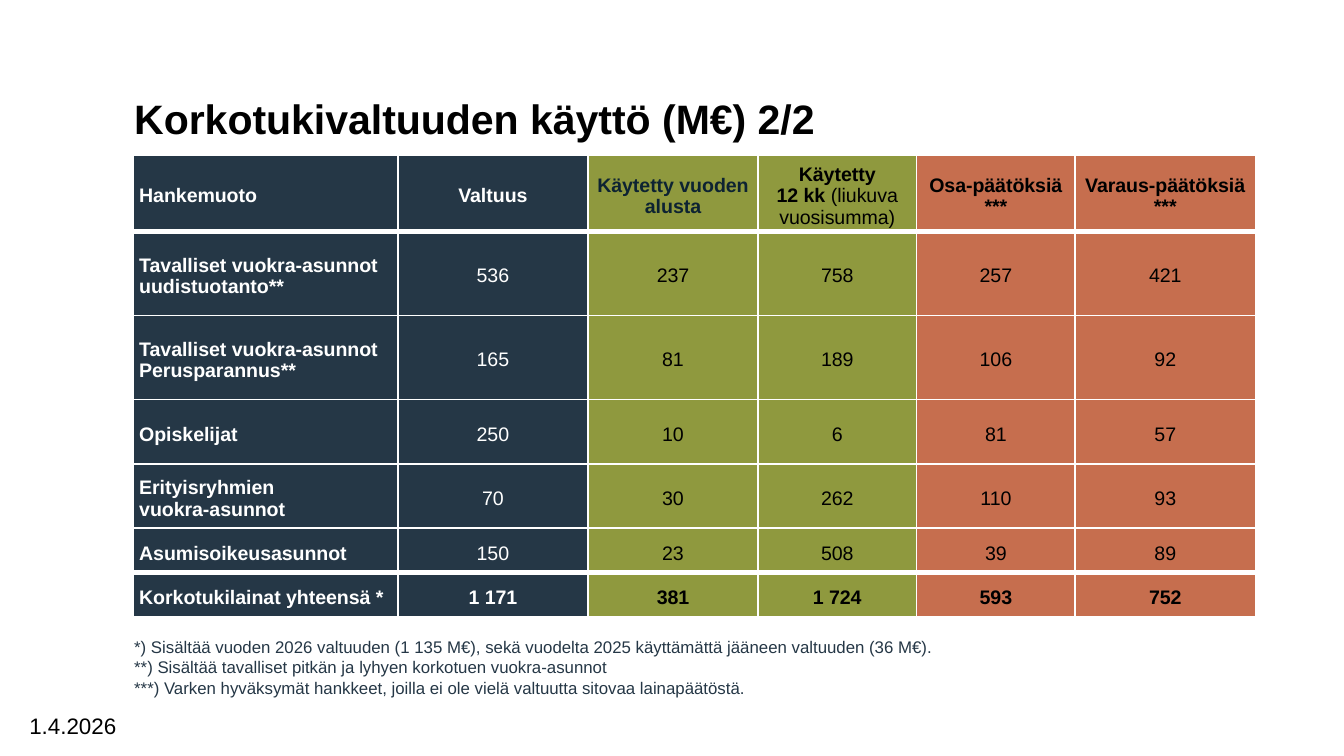
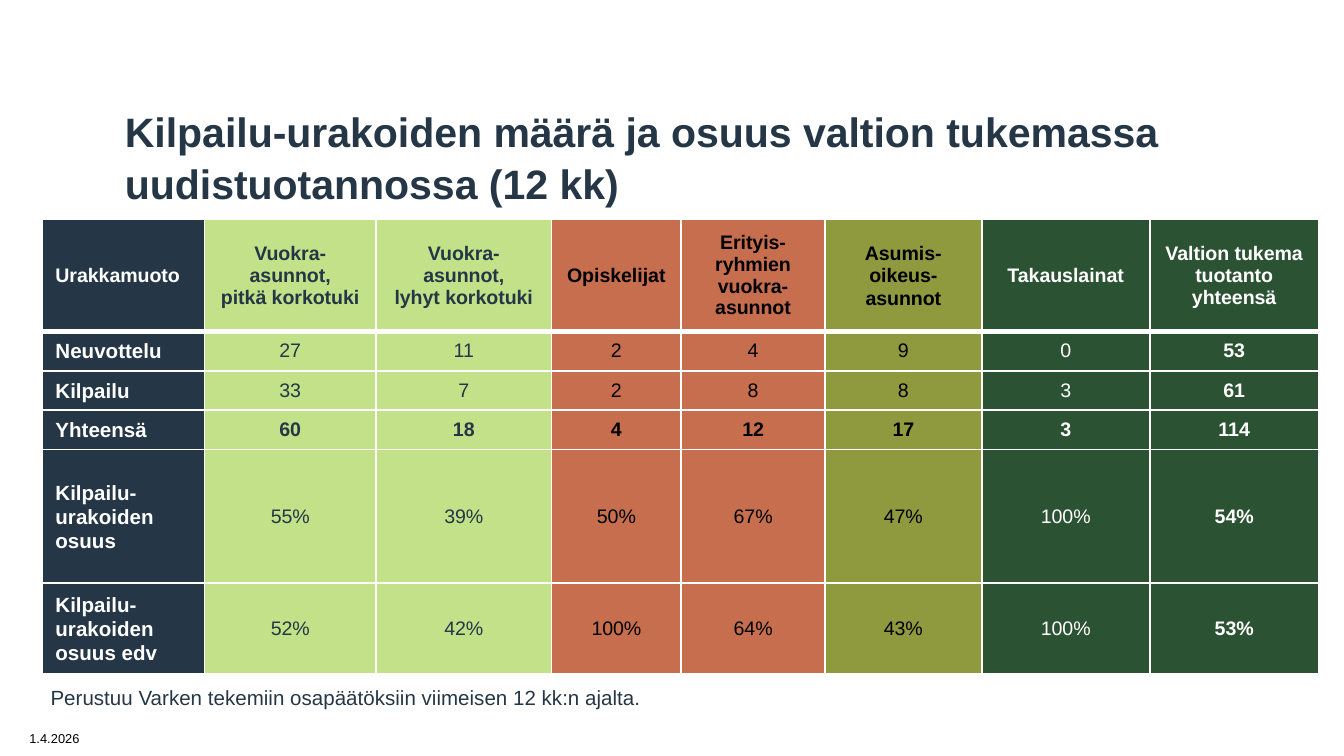
from itertools import product

from lxml import etree
from pptx import Presentation
from pptx.dml.color import RGBColor
from pptx.enum.text import MSO_ANCHOR, MSO_AUTO_SIZE, PP_ALIGN
from pptx.oxml.ns import qn
from pptx.util import Pt

MIDDLE = MSO_ANCHOR.MIDDLE
GROW = MSO_AUTO_SIZE.SHAPE_TO_FIT_TEXT
LEFT, CENTER = PP_ALIGN.LEFT, PP_ALIGN.CENTER

COLORS = {
    "black": "000000",
    "white": "FFFFFF",
    "navy": "253746",
    "ink": "0D2332",
    "olive": "8F993E",
    "clay": "C66E4E",
    "lime": "C2E189",
    "forest": "2C5234",
}
FONT = "Arial"
DATE = "1.4.2026"
CELL_SIZE = 10.5
THIN, THICK = 1, 3
TIGHT = (3, 3, 3, 3)
WIDE = (7.2, 3.6, 7.2, 3.6)

AUTHORITY_ROWS = [
    ["Hankemuoto", "Valtuus", "Käytetty vuoden alusta",
     "Käytetty\v12 kk |(liukuva vuosisumma)",
     "Osa-päätöksiä\n***", "Varaus-päätöksiä\n***"],
    ["Tavalliset vuokra-asunnot uudistuotanto**", "536", "237", "758", "257", "421"],
    ["Tavalliset vuokra-asunnot Perusparannus**", "165", "81", "189", "106", "92"],
    ["Opiskelijat", "250", "10", "6", "81", "57"],
    ["Erityisryhmien\vvuokra-asunnot", "70", "30", "262", "110", "93"],
    ["Asumisoikeusasunnot", "150", "23", "508", "39", "89"],
    ["Korkotukilainat yhteensä *", "1 171", "381", "1 724", "593", "752"],
]
AUTHORITY_NOTES = (
    "*) Sisältää vuoden 2026 valtuuden (1 135 M€), sekä vuodelta 2025 "
    "käyttämättä jääneen valtuuden (36 M€).\n"
    "**) Sisältää tavalliset pitkän ja lyhyen korkotuen vuokra-asunnot\n"
    "***) Varken hyväksymät hankkeet, joilla ei ole vielä valtuutta sitovaa lainapäätöstä."
)
CONTRACT_ROWS = [
    ["Urakkamuoto", "Vuokra-asunnot,\vpitkä korkotuki", "Vuokra-asunnot,\vlyhyt korkotuki",
     "Opiskelijat", "Erityis-ryhmien\vvuokra-asunnot", "Asumis-oikeus-asunnot",
     "Takauslainat", "Valtion tukema tuotanto yhteensä"],
    ["Neuvottelu", "27", "11", "2", "4", "9", "0", "53"],
    ["Kilpailu", "33", "7", "2", "8", "8", "3", "61"],
    ["Yhteensä", "60", "18", "4", "12", "17", "3", "114"],
    ["Kilpailu-urakoiden osuus", "55%", "39%", "50%", "67%", "47%", "100%", "54%"],
    ["Kilpailu-urakoiden osuus edv", "52%", "42%", "100%", "64%", "43%", "100%", "53%"],
]


def rgb(name):
    return RGBColor.from_string(COLORS[name])


def style_run(run, size, color, bold):
    run.font.name = FONT
    run.font.size = Pt(size)
    run.font.bold = bold
    run.font.color.rgb = rgb(color)


def style_text(frame, size, color, bold=False, align=LEFT, spacing=None):
    for paragraph in frame.paragraphs:
        paragraph.alignment = align
        if spacing:
            paragraph.line_spacing = spacing
        for run in paragraph.runs:
            style_run(run, size, color, bold)
        for line_break in paragraph._p.findall(qn("a:br")):
            etree.SubElement(line_break, qn("a:rPr"), sz=str(int(size * 100)))


def add_text(slide, box, text, size, color, bold=False, spacing=None):
    frame = slide.shapes.add_textbox(*map(Pt, box)).text_frame
    frame.word_wrap = True
    frame.text = text
    style_text(frame, size, color, bold, spacing=spacing)
    return frame


def add_title(slide, box, text, color):
    title = add_text(slide, box, text, 22, color, True, 1.05)
    title.vertical_anchor = MIDDLE


def add_notes(slide, box, text, size):
    add_text(slide, box, text, size, "navy").auto_size = GROW


def add_date(slide, top, raised=False):
    date = add_text(slide, (8.6, top, 126, 18), DATE, 12, "black")
    if raised:
        date.paragraphs[0].runs[0].font._element.set("baseline", "30000")


def add_borders(cell, top, bottom):
    properties = cell._tc.get_or_add_tcPr()
    sides = {"lnL": THIN, "lnR": THIN, "lnT": top, "lnB": bottom}
    for index, (side, width) in enumerate(sides.items()):
        line = etree.Element(qn(f"a:{side}"), w=str(Pt(width)))
        fill = etree.SubElement(line, qn("a:solidFill"))
        etree.SubElement(fill, qn("a:srgbClr"), val=COLORS["white"])
        properties.insert(index, line)


def fill_cell(cell, text, fill, color, size, bold, align, insets, spacing):
    cell.margin_left, cell.margin_top, cell.margin_right, cell.margin_bottom = map(Pt, insets)
    cell.vertical_anchor = MIDDLE
    cell.fill.solid()
    cell.fill.fore_color.rgb = rgb(fill)
    main, _, detail = text.partition("|")
    cell.text_frame.text = main
    style_text(cell.text_frame, size, color, bold, align, spacing)
    if detail:
        run = cell.text_frame.paragraphs[-1].add_run()
        run.text = detail
        style_run(run, size, color, False)


def add_grid(slide, origin, rows, widths, heights, thick_edges, cell_style):
    table = slide.shapes.add_table(
        len(rows), len(widths), *map(Pt, (*origin, sum(widths), sum(heights)))
    ).table
    table.first_row = table.horz_banding = False
    for column, width in zip(table.columns, widths):
        column.width = Pt(width)
    for row, height in zip(table.rows, heights):
        row.height = Pt(height)
    edges = [THICK if edge in thick_edges else THIN for edge in range(len(rows) + 1)]
    for r, c in product(range(len(rows)), range(len(widths))):
        cell = table.cell(r, c)
        fill_cell(cell, rows[r][c], align=CENTER if c else LEFT, **cell_style(r, c))
        add_borders(cell, edges[r], edges[r + 1])


def authority_style(r, c):
    fill = ["navy", "olive", "clay"][c // 2]
    color = "white" if fill == "navy" else "black"
    return {
        "fill": fill,
        "color": "ink" if (r, c) == (0, 2) else color,
        "size": CELL_SIZE,
        "bold": r in (0, len(AUTHORITY_ROWS) - 1) or c == 0,
        "insets": (3, 3, 3, 0),
        "spacing": None,
    }


def contract_style(r, c):
    fill = ["navy", "lime", "lime", "clay", "clay", "olive", "forest", "forest"][c]
    color = {"navy": "white", "forest": "white", "lime": "navy"}.get(fill, "black")
    row_label = r > 0 and c == 0
    return {
        "fill": fill,
        "color": color,
        "size": 11 if row_label else CELL_SIZE,
        "bold": r in (0, 3) or c in (0, 7),
        "insets": WIDE if r == 0 or c == 0 else TIGHT,
        "spacing": 1.05 if row_label or (r, c) == (0, 5) else None,
    }


def build_authority_slide(slide):
    add_title(slide, (64.8, 49, 494, 27.4), "Korkotukivaltuuden käyttö (M€) 2/2", "black")
    add_grid(slide, (71.6, 83.2), AUTHORITY_ROWS, [141.5, 102, 91, 85, 85, 96.5],
             [37, 45, 45, 34.5, 34.5, 24, 23.5], {1, 6}, authority_style)
    add_notes(slide, (64.8, 337.7, 655, 40.3), AUTHORITY_NOTES, 9)
    add_date(slide, 378)


def build_contract_slide(slide):
    add_title(slide, (59.8, 69.8, 646.5, 27.4),
              "Kilpailu-urakoiden määrä ja osuus valtion tukemassa uudistuotannossa (12 kk)",
              "navy")
    add_grid(slide, (22.5, 117.6), CONTRACT_ROWS, [87, 92, 94, 69.5, 77, 84, 90, 90.5],
             [60, 20, 20, 20, 71.5, 45], {1}, contract_style)
    add_notes(slide, (20, 363.6, 551.5, 20.9),
              "Perustuu Varken tekemiin osapäätöksiin viimeisen 12 kk:n ajalta.", 11)
    add_date(slide, 386.6, raised=True)


def main():
    deck = Presentation()
    deck.slide_width, deck.slide_height = Pt(720), Pt(405)
    for build in (build_authority_slide, build_contract_slide):
        build(deck.slides.add_slide(deck.slide_layouts[6]))
    deck.save("out.pptx")


if __name__ == "__main__":
    main()
